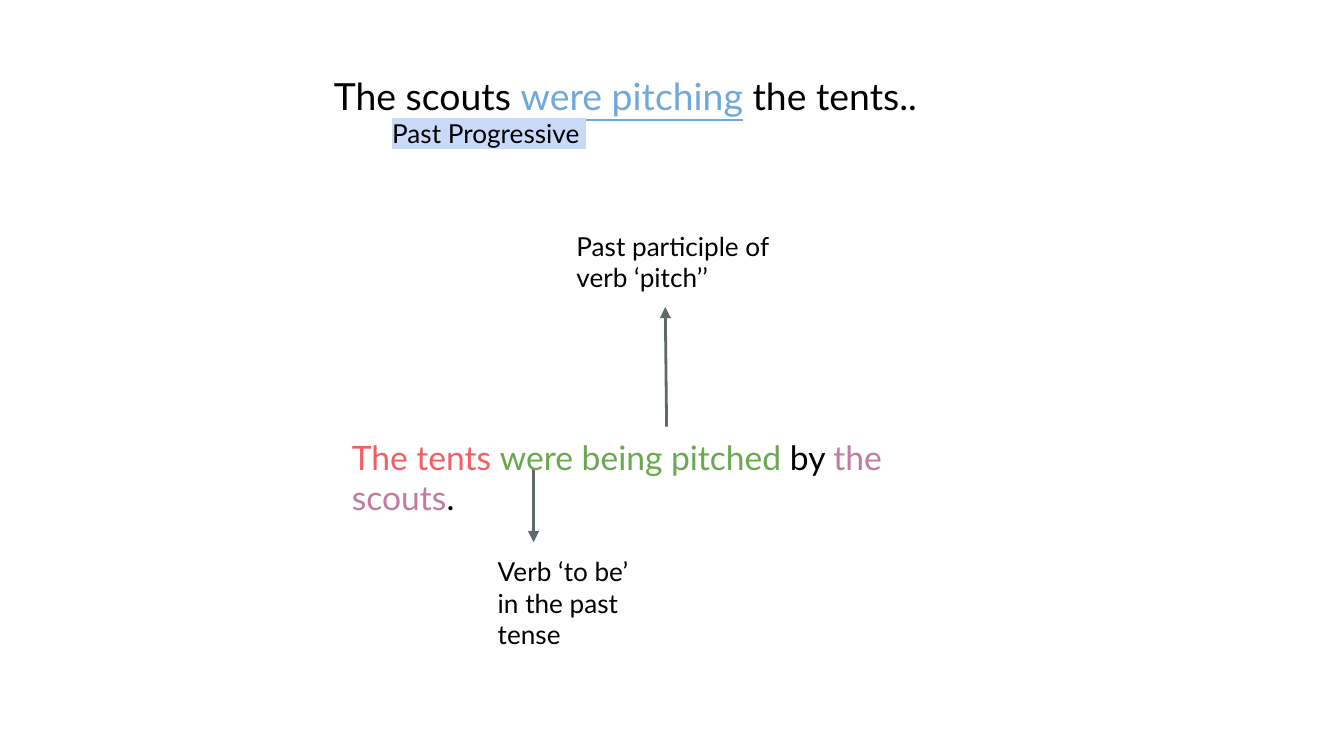
from lxml.etree import SubElement
from pptx import Presentation
from pptx.dml.color import RGBColor
from pptx.enum.shapes import MSO_CONNECTOR
from pptx.oxml.ns import qn
from pptx.util import Emu, Pt

PX = 4572
FONT = "Lato"
BLACK = RGBColor(0x00, 0x00, 0x00)
GRAY = RGBColor(0x5E, 0x69, 0x6C)
BLUE = RGBColor(0x6F, 0xA8, 0xDC)
PALE = RGBColor(0xC9, 0xDA, 0xF8)
RED = RGBColor(0xF5, 0x5E, 0x61)
GREEN = RGBColor(0x6A, 0xA8, 0x4F)
MAUVE = RGBColor(0xC2, 0x7B, 0xA0)


def px(*sizes):
    return [Emu(size * PX) for size in sizes]


def add_text(slide, area, size, *parts):
    frame = slide.shapes.add_textbox(*px(*area)).text_frame
    frame.word_wrap = True
    frame.margin_left, frame.margin_top, frame.margin_right, frame.margin_bottom = px(20, 20, 20, 20)
    line = frame.paragraphs[0]
    line.font.name = FONT
    line.font.size = Pt(size)
    runs = []
    for text, color in parts:
        run = line.add_run()
        run.text = text
        run.font.color.rgb = color
        runs.append(run)
    return runs


def mark(run, color):
    light = SubElement(run.font._element, qn("a:highlight"))
    SubElement(light, qn("a:srgbClr"), val=str(color))


def add_arrow(slide, start, end):
    arrow = slide.shapes.add_connector(MSO_CONNECTOR.STRAIGHT, *px(*start, *end))
    arrow.line.color.rgb = GRAY
    arrow.line.width = Pt(1.5)
    SubElement(arrow.line._get_or_add_ln(), qn("a:tailEnd"), type="triangle")
    SubElement(arrow._element.spPr, qn("a:effectLst"))


def main():
    deck = Presentation()
    deck.slide_width, deck.slide_height = px(2000, 1125)
    slide = deck.slides.add_slide(deck.slide_layouts[6])

    add_text(slide, (838, 323, 336, 182), 14, ("Past participle of verb ‘pitch’’", BLACK))
    add_arrow(slide, (992, 635), (990, 457))
    add_text(slide, (721, 807, 266, 228), 14, ("Verb ‘to be’ in the past tense", BLACK))
    add_arrow(slide, (794, 696), (794, 807))

    active = add_text(slide, (477, 89, 1010, 108), 20,
                      ("The scouts ", BLACK), ("were pitching", BLUE), (" the tents..", BLACK))
    active[1].font.underline = True
    tense = add_text(slide, (564, 155, 368, 88), 14, ("Past Progressive ", BLACK))
    mark(tense[0], PALE)
    add_text(slide, (504, 630, 850, 162), 18,
             ("The tents ", RED), ("were being pitched", GREEN), (" by ", BLACK),
             ("the scouts", MAUVE), (".", BLACK))

    deck.save("out.pptx")


if __name__ == "__main__":
    main()
